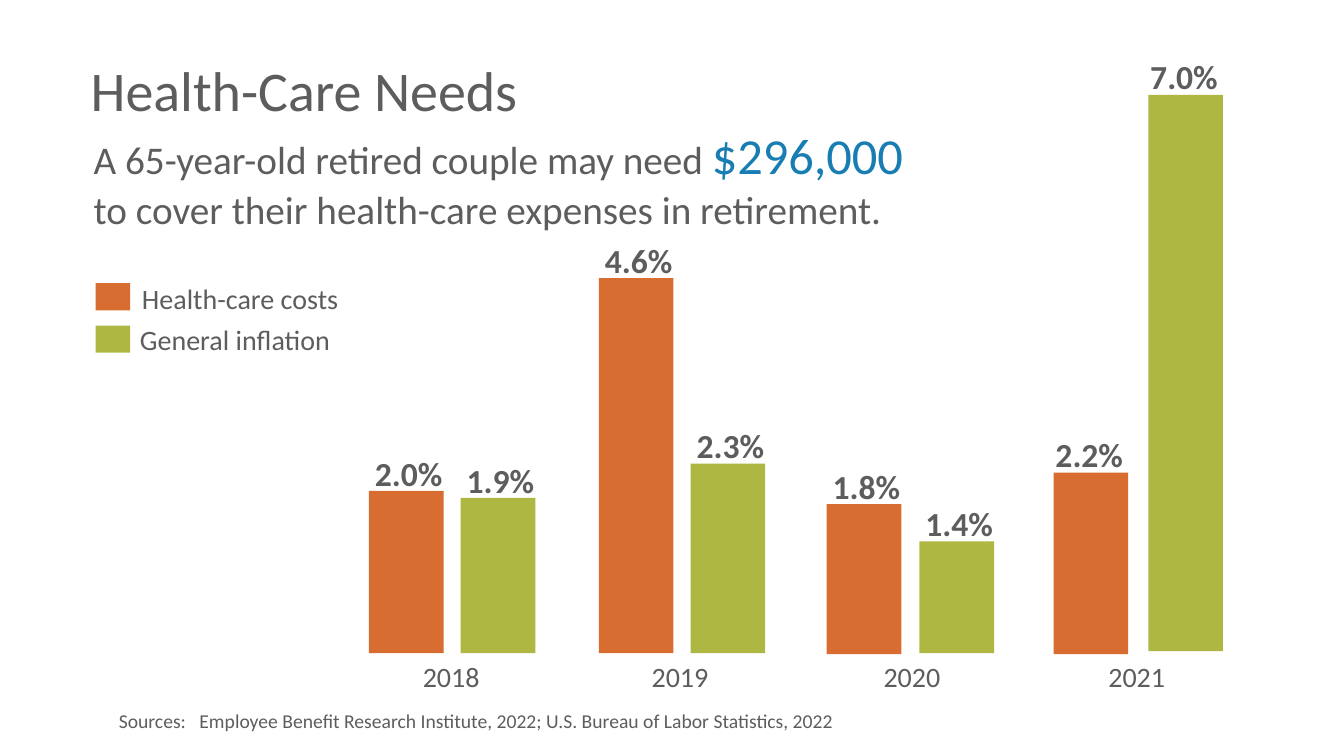
from dataclasses import dataclass

from lxml.etree import SubElement
from pptx import Presentation
from pptx.dml.color import RGBColor
from pptx.enum.shapes import MSO_SHAPE as Preset
from pptx.enum.text import MSO_ANCHOR as Anchor, MSO_AUTO_SIZE as AutoSize, PP_ALIGN as Align
from pptx.oxml.ns import qn
from pptx.util import Emu, Pt

PX = 9144
GREY, BLUE, ORANGE, GREEN = "5D5D5D", "177DB3", "D76D31", "AFB743"
BAR_WIDTH = 74
LABEL_RISE = 43
YEAR_TOP = 649


@dataclass(frozen=True)
class Bar:
    """One measured bar with its printed value."""
    value: str
    left: int
    top: int
    height: int


@dataclass(frozen=True)
class YearGroup:
    """A year's pair of bars and the placing of its labels."""
    year: str
    year_left: int
    label_shift: int
    health_care: Bar
    inflation: Bar


@dataclass(frozen=True)
class LegendEntry:
    """A legend swatch and its wording."""
    wording: str
    colour: str
    swatch_top: int
    text_left: int
    text_top: int


GROUPS = (
    YearGroup("2018", 365, 4, Bar("2.0%", 366, 487, 161), Bar("1.9%", 457, 494, 154)),
    YearGroup("2019", 592, 4, Bar("4.6%", 594, 276, 372), Bar("2.3%", 685, 460, 188)),
    YearGroup("2020", 822, 4, Bar("1.8%", 820, 500, 149), Bar("1.4%", 912, 537, 111)),
    YearGroup("2021", 1045, 8, Bar("2.2%", 1045, 469, 180), Bar("7.0%", 1139, 94, 552)),
)
LEGEND = (
    LegendEntry("Health-care costs", ORANGE, 281, 131, 274),
    LegendEntry("General inflation", GREEN, 323, 129, 315),
)


def px(length: int) -> Emu:
    """Turn px into EMU."""
    return Emu(length * PX)


def colour_of(value: str) -> RGBColor:
    """Turn a hex string into a colour."""
    return RGBColor.from_string(value)


def add_run(paragraph, text: str, size: int, colour: str = GREY, bold: bool = False) -> None:
    """Add a formatted run to a paragraph."""
    run = paragraph.add_run()
    run.text = text
    formats = {"name": "Calibri", "size": Pt(size), "bold": bold}
    for name, value in formats.items():
        setattr(run.font, name, value)
    run.font.color.rgb = colour_of(colour)


def add_text_box(slide, left: int, top: int, width: int, height: int):
    """Add a wrapping text box and return its first paragraph."""
    frame = slide.shapes.add_textbox(px(left), px(top), px(width), px(height)).text_frame
    frame.word_wrap = True
    return frame.paragraphs[0]


def add_block(slide, left: int, top: int, width: int, height: int, colour: str) -> None:
    """Add a plain filled rectangle."""
    shape = slide.shapes.add_shape(Preset.RECTANGLE, px(left), px(top), px(width), px(height))
    shape.shadow.inherit = False
    shape.fill.solid()
    shape.fill.fore_color.rgb = colour_of(colour)
    shape.line.fill.background()


def add_title(slide) -> None:
    """Place and fill the title placeholder."""
    title = slide.shapes.title
    place = {"left": 80, "top": 58, "width": 1176, "height": 103}
    for name, value in place.items():
        setattr(title, name, px(value))
    title.text_frame.auto_size = AutoSize.NONE
    title.text_frame.vertical_anchor = Anchor.TOP
    paragraph = title.text_frame.paragraphs[0]
    paragraph.alignment = Align.LEFT
    paragraph.line_spacing = 0.89
    add_run(paragraph, "Health-Care Needs", 40)


def add_statement(slide) -> None:
    """Add the sentence with the highlighted amount."""
    paragraph = add_text_box(slide, 83, 131, 861, 106)
    paragraph.line_spacing = Pt(34)
    add_run(paragraph, "A 65-year-old retired couple may need ", 28)
    add_run(paragraph, "$296,000 ", 36, BLUE)
    add_run(paragraph, "to cover their health-care expenses in retirement.", 28)


def add_legend_entry(slide, entry: LegendEntry) -> None:
    """Add one legend swatch with its text."""
    add_block(slide, 95, entry.swatch_top, 34, 27, entry.colour)
    paragraph = add_text_box(slide, entry.text_left, entry.text_top, 264, 44)
    add_run(paragraph, entry.wording, 20)


def add_year_group(slide, group: YearGroup) -> None:
    """Add a year's two bars, their values and the year."""
    for bar, colour in ((group.health_care, ORANGE), (group.inflation, GREEN)):
        add_block(slide, bar.left, bar.top, BAR_WIDTH, bar.height, colour)
        label = add_text_box(slide, bar.left - group.label_shift, bar.top - LABEL_RISE, 88, 51)
        label.alignment = Align.LEFT
        add_run(label, bar.value, 24, bold=True)
    year = add_text_box(slide, group.year_left, YEAR_TOP, 165, 44)
    year.alignment = Align.CENTER
    add_run(year, group.year, 20)


def add_sources(slide) -> None:
    """Add the source line with a tab after its lead word."""
    paragraph = add_text_box(slide, 108, 698, 824, 34)
    tabs = SubElement(paragraph._p.get_or_add_pPr(), qn("a:tabLst"))
    SubElement(tabs, qn("a:tab"), pos=str(px(80)), algn="l")
    add_run(paragraph, "Sources:\tEmployee Benefit Research Institute, 2022; "
                       "U.S. Bureau of Labor Statistics, 2022", 14)


def main() -> None:
    """Build and save the slide."""
    presentation = Presentation()
    presentation.slide_width, presentation.slide_height = px(1333), px(750)
    slide = presentation.slides.add_slide(presentation.slide_layouts[5])
    add_title(slide)
    add_statement(slide)
    for entry in LEGEND:
        add_legend_entry(slide, entry)
    for group in GROUPS:
        add_year_group(slide, group)
    add_sources(slide)
    presentation.save("out.pptx")


if __name__ == "__main__":
    main()
